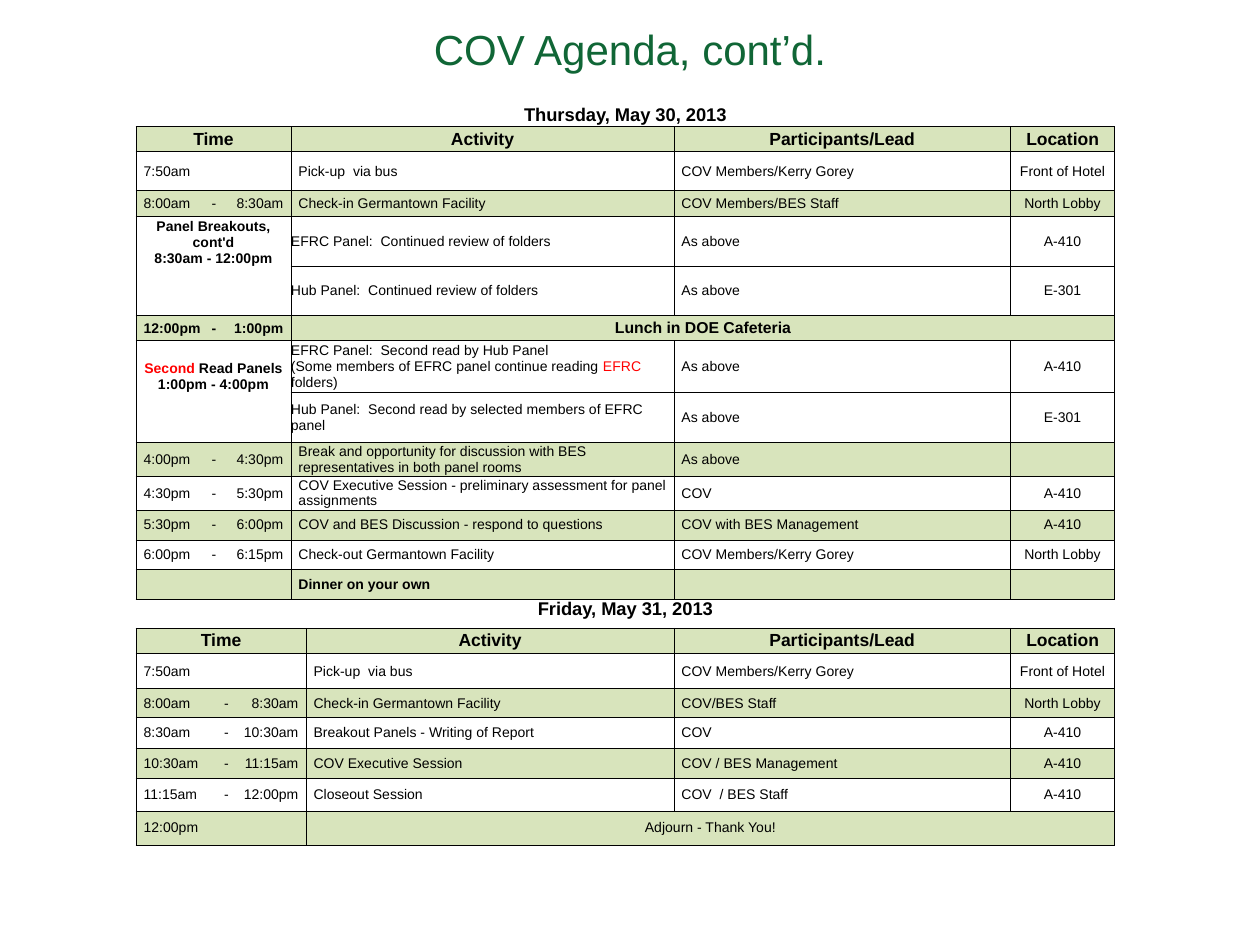
from lxml import etree
from pptx import Presentation
from pptx import util as u
from pptx.dml.color import RGBColor
from pptx.enum import text
from pptx.oxml import ns

COLORS = {"title": "106636", "text": "000000", "accent": "FF0000", "shade": "D8E4BC", "border": "000000"}
LEFT, CENTER, RIGHT = text.PP_ALIGN.LEFT, text.PP_ALIGN.CENTER, text.PP_ALIGN.RIGHT
MIDDLE, TOP, BOTTOM = text.MSO_ANCHOR.MIDDLE, text.MSO_ANCHOR.TOP, text.MSO_ANCHOR.BOTTOM

# Cell styles: alignment, anchor, left inset, right inset, size, bold
STYLES = {
    "day": (CENTER, TOP, 0, 0, 10.5, True),
    "header": (CENTER, MIDDLE, 0, 0, 10, True),
    "body": (LEFT, MIDDLE, 0.06, 0, 8, False),
    "bold": (LEFT, MIDDLE, 0.06, 0, 8, True),
    "flush": (LEFT, MIDDLE, 0, 0, 8, False),
    "flush bold": (LEFT, MIDDLE, 0, 0, 8, True),
    "end": (RIGHT, MIDDLE, 0, 0.06, 8, False),
    "end bold": (RIGHT, MIDDLE, 0, 0.06, 8, True),
    "center": (CENTER, MIDDLE, 0, 0, 8, False),
    "panel": (CENTER, BOTTOM, 0, 0, 8, True),
    "lunch": (CENTER, MIDDLE, 0, 0, 9, True),
}

# Column spans of the start, dash and end of a time
EARLY, LATE, FRIDAY = (1, 1, 3), (1, 2, 2), (2, 2, 2)
HEADER = ("Time", "Activity", "Participants/Lead", "Location")

# Rows: height, shaded, kind, time spans, times, then activity, participants, location
# Red words stand between asterisks
ROWS = [
    (0.17, False, "day", None, "Thursday, May 30, 2013"),
    (0.2, True, "header", EARLY, *HEADER),
    (0.31, False, "body", EARLY, ("7:50am", "", ""), "Pick-up  via bus", "COV Members/Kerry Gorey", "Front of Hotel"),
    (0.2, True, "body", EARLY, ("8:00am", "-", "8:30am"), "Check-in Germantown Facility",
     "COV Members/BES Staff", "North Lobby"),
    (0.39, False, "panel", EARLY, "Panel Breakouts, cont'd\n8:30am - 12:00pm",
     "EFRC Panel:  Continued review of folders", "As above", "A-410"),
    (0.39, False, "second panel", EARLY, ("", "", ""), "Hub Panel:  Continued review of folders", "As above", "E-301"),
    (0.2, True, "lunch", EARLY, ("12:00pm", "-", "1:00pm"), "Lunch in DOE Cafeteria"),
    (0.41, False, "panel", EARLY, "*Second* Read Panels\n1:00pm - 4:00pm",
     "EFRC Panel:  Second read by Hub Panel\n(Some members of EFRC panel continue reading *EFRC* folders)",
     "As above", "A-410"),
    (0.4, False, "second panel", LATE, ("", "", ""), "Hub Panel:  Second read by selected members of EFRC panel",
     "As above", "E-301"),
    (0.25, True, "body", LATE, ("4:00pm", "-", "4:30pm"),
     "Break and opportunity for discussion with BES representatives in both panel rooms", "As above", ""),
    (0.25, False, "body", LATE, ("4:30pm", "-", "5:30pm"),
     "COV Executive Session - preliminary assessment for panel assignments", "COV", "A-410"),
    (0.24, True, "body", LATE, ("5:30pm", "-", "6:00pm"), "COV and BES Discussion - respond to questions",
     "COV with BES Management", "A-410"),
    (0.23, False, "body", LATE, ("6:00pm", "-", "6:15pm"), "Check-out Germantown Facility",
     "COV Members/Kerry Gorey", "North Lobby"),
    (0.24, True, "bold", LATE, ("", "", ""), "Dinner on your own", "", ""),
    (0.23, False, "day", None, "Friday, May 31, 2013"),
    (0.2, True, "header", FRIDAY, *HEADER),
    (0.28, False, "body", FRIDAY, ("7:50am", "", ""), "Pick-up  via bus", "COV Members/Kerry Gorey", "Front of Hotel"),
    (0.23, True, "body", FRIDAY, ("8:00am", "-", "8:30am"), "Check-in Germantown Facility",
     "COV/BES Staff", "North Lobby"),
    (0.24, False, "body", FRIDAY, ("8:30am", "-", "10:30am"), "Breakout Panels - Writing of Report", "COV", "A-410"),
    (0.24, True, "body", FRIDAY, ("10:30am", "-", "11:15am"), "COV Executive Session",
     "COV / BES Management", "A-410"),
    (0.26, False, "body", FRIDAY, ("11:15am", "-", "12:00pm"), "Closeout Session", "COV  / BES Staff", "A-410"),
    (0.27, True, "center", FRIDAY, ("12:00pm", "", ""), "Adjourn - Thank You!"),
]
COLUMNS = [0.6, 0.09, 0.03, 0.05, 0.45, 0.12, 2.92, 2.67, 0.83]


def write(paragraph, content, size, bold, color):
    for index, part in enumerate(content.split("*")):
        for line_index, line in enumerate(part.split("\n")):
            if line_index:
                paragraph.add_line_break()
            if line:
                run = paragraph.add_run()
                run.text = line
                for name, value in {"name": "Arial", "size": u.Pt(size), "bold": bold}.items():
                    setattr(run.font, name, value)
                run.font.color.rgb = RGBColor.from_string(COLORS["accent" if index % 2 else color])
    if not content:
        etree.SubElement(paragraph._p, ns.qn("a:endParaRPr"), sz=str(int(size * 100)))


def draw_borders(cell, sides):
    properties = cell._tc.get_or_add_tcPr()
    for position, side in enumerate("LRTB"):
        line = etree.Element(ns.qn(f"a:ln{side}"), w=str(u.Pt(0.5)))
        if side in sides:
            fill = etree.SubElement(line, ns.qn("a:solidFill"))
            etree.SubElement(fill, ns.qn("a:srgbClr"), val=COLORS["border"])
        else:
            etree.SubElement(line, ns.qn("a:noFill"))
        properties.insert(position, line)


presentation = Presentation()
presentation.slide_width, presentation.slide_height = u.Inches(10), u.Inches(7.5)
slide = presentation.slides.add_slide(presentation.slide_layouts[6])

# Title
title = slide.shapes.add_textbox(u.Inches(0), u.Inches(-0.24), u.Inches(10), u.Inches(1.25))
title.text_frame.word_wrap = True
title.text_frame.vertical_anchor = MIDDLE
title.text_frame.paragraphs[0].alignment = CENTER
write(title.text_frame.paragraphs[0], "COV Agenda, cont’d.", 24, False, "title")

# Agenda grid
frame = slide.shapes.add_table(len(ROWS), len(COLUMNS), u.Inches(1.08), u.Inches(0.83),
                               u.Inches(sum(COLUMNS)), u.Inches(sum(row[0] for row in ROWS)))
table = frame.table
table.first_row = table.horz_banding = False
for column, width in zip(table.columns, COLUMNS):
    column.width = u.Inches(width)

for row_index, (height, shaded, kind, time_spans, times, *details) in enumerate(ROWS):
    table.rows[row_index].height = u.Inches(height)

    # Cells of the row: text, style, column span, borders
    if kind == "day":
        cells = [(times, "day", len(COLUMNS), "B" if row_index == 0 else "TB")]
    else:
        if isinstance(times, str):
            sides = "LTR" if kind == "panel" else "LRTB"
            cells = [(times, kind, sum(time_spans), sides)]
        else:
            styles = ("bold", "flush bold", "end bold") if kind == "lunch" else ("body", "flush", "end")
            all_sides = ("LB", "B", "RB") if kind == "second panel" else ("LTB", "TB", "TRB")
            cells = list(zip(times, styles, time_spans, all_sides))
        activity_span = 7 - sum(time_spans)
        if len(details) == 1:
            cells.append((details[0], kind, activity_span + 2, "LRTB"))
        else:
            detail_styles = {"header": ("header",) * 3, "bold": ("bold", "body", "center")}.get(
                kind, ("flush" if "panel" in kind else "body", "body", "center"))
            cells += zip(details, detail_styles, (activity_span, 1, 1), ("LRTB",) * 3)

    column_index = 0
    for content, style, span, sides in cells:
        cell = table.cell(row_index, column_index)
        if span > 1:
            cell.merge(table.cell(row_index, column_index + span - 1))
        alignment, anchor, left, right, size, bold = STYLES[style]
        for name, value in {"vertical_anchor": anchor, "margin_left": u.Inches(left), "margin_right": u.Inches(right),
                            "margin_top": 0, "margin_bottom": 0}.items():
            setattr(cell, name, value)
        if shaded:
            cell.fill.solid()
            cell.fill.fore_color.rgb = RGBColor.from_string(COLORS["shade"])
        else:
            cell.fill.background()
        draw_borders(cell, sides)
        paragraph = cell.text_frame.paragraphs[0]
        paragraph.alignment = alignment
        write(paragraph, content, size, bold, "text")
        column_index += span

presentation.save("out.pptx")
